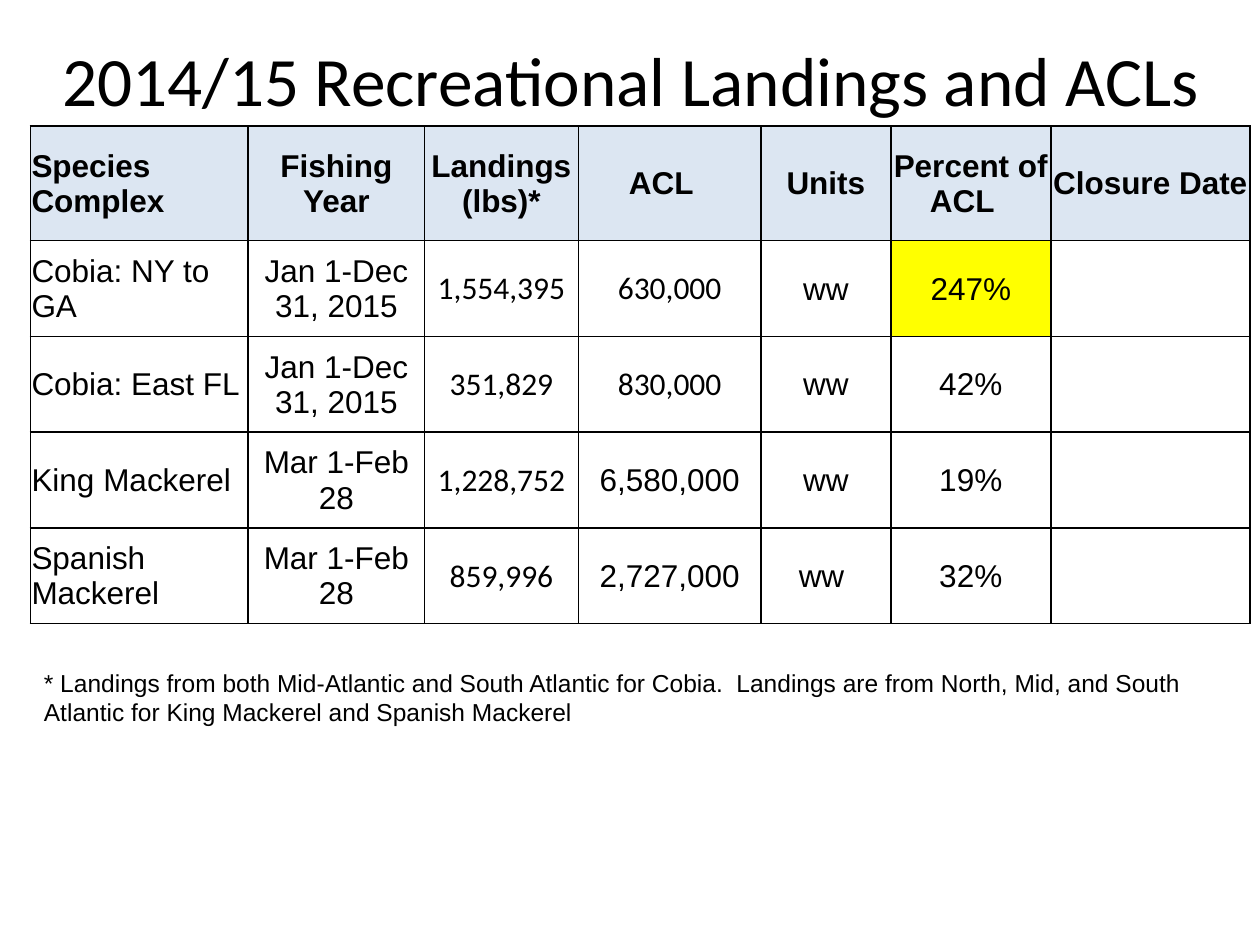
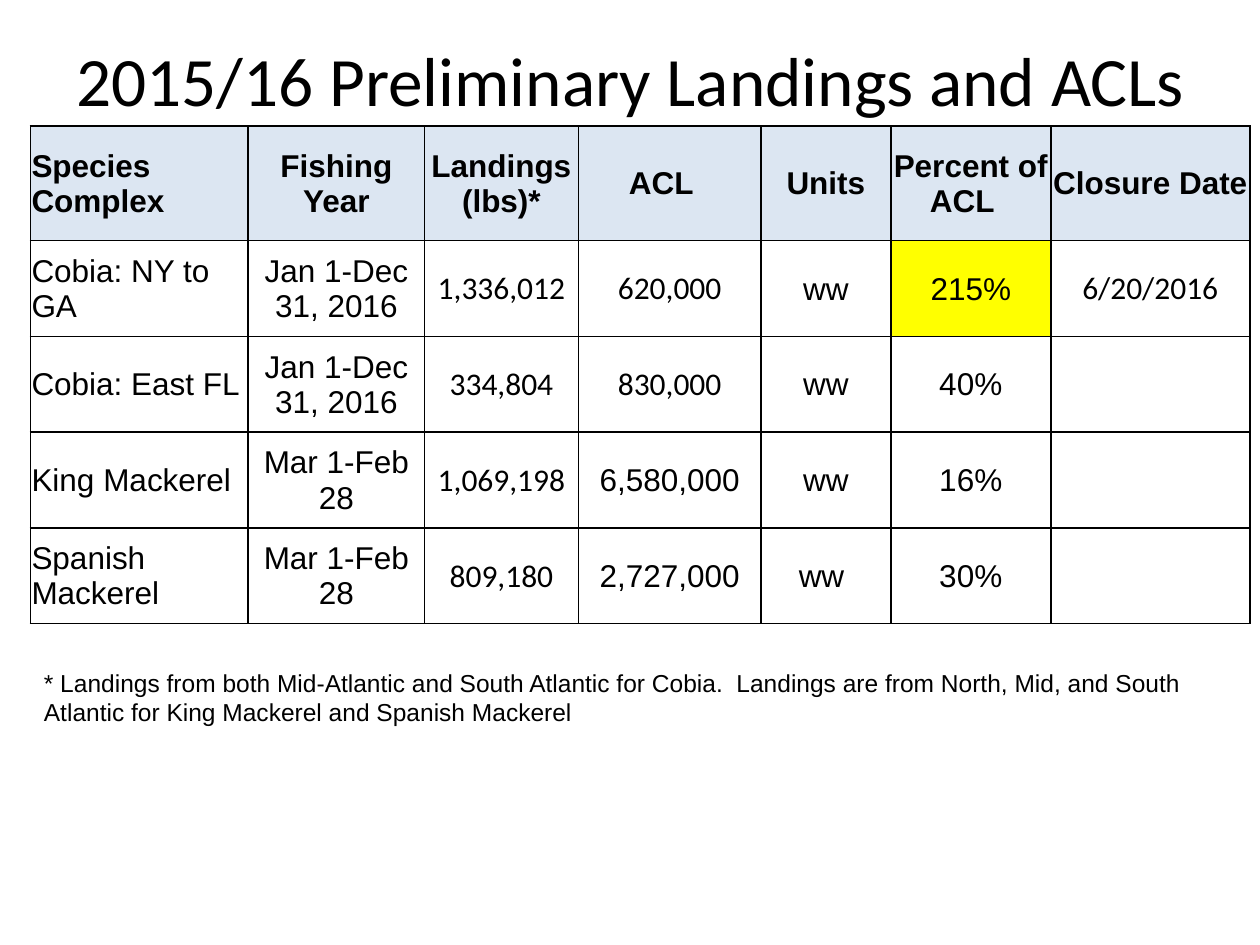
from lxml import etree
from pptx import Presentation
from pptx.dml.color import RGBColor
from pptx.enum.text import MSO_ANCHOR as Anchor, MSO_AUTO_SIZE as AutoSize, PP_ALIGN as Align
from pptx.oxml.ns import qn
from pptx.util import Inches, Pt

BLACK = RGBColor(0x00, 0x00, 0x00)
WHITE = RGBColor(0xFF, 0xFF, 0xFF)
HEADER_BLUE = RGBColor(0xDC, 0xE6, 0xF2)
OVER_LIMIT_YELLOW = RGBColor(0xFF, 0xFF, 0x00)

BODY_FONT = "Arial"
FIGURE_FONT = "Calibri"

COL_WIDTHS = [1.73, 1.4, 1.22, 1.45, 1.03, 1.27, 1.58]
HEADER_HEIGHT, ROW_HEIGHT = 0.91, 0.76
HEADERS = ["Species Complex", "Fishing Year", "Landings (lbs)*", "ACL  ",
           "Units", "Percent of ACL  ", "Closure Date"]
SPECIES, LANDINGS, ACL, PERCENT, CLOSURE = 0, 2, 3, 5, 6

NOTE = ("* Landings from both Mid-Atlantic and South Atlantic for Cobia.  "
        "Landings are from North, Mid, and South Atlantic for King Mackerel "
        "and Spanish Mackerel")

SLIDES = [
    ("2014/15 Recreational Landings and ACLs", [
        ["Cobia: NY to GA", "Jan 1-Dec 31, 2015", "1,554,395", "630,000", "ww", "247%", ""],
        ["Cobia: East FL", "Jan 1-Dec 31, 2015", "351,829", "830,000", "ww", "42%", ""],
        ["King Mackerel", "Mar 1-Feb 28", "1,228,752", "6,580,000", "ww", "19%", ""],
        ["Spanish Mackerel", "Mar 1-Feb 28", "859,996", "2,727,000", "ww ", "32%", ""],
    ]),
    ("2015/16 Preliminary Landings and ACLs", [
        ["Cobia: NY to GA", "Jan 1-Dec 31, 2016", "1,336,012", "620,000", "ww", "215%",
         "6/20/2016"],
        ["Cobia: East FL", "Jan 1-Dec 31, 2016", "334,804", "830,000", "ww", "40%", ""],
        ["King Mackerel", "Mar 1-Feb 28", "1,069,198", "6,580,000", "ww", "16%", ""],
        ["Spanish Mackerel", "Mar 1-Feb 28", "809,180", "2,727,000", "ww ", "30%", ""],
    ]),
]


def write(tf, text, size=18, font=BODY_FONT, bold=False, align=Align.LEFT):
    p = tf.paragraphs[0]
    p.alignment = align
    r = p.add_run()
    r.text = text
    r.font.size = Pt(size)
    r.font.name = font
    r.font.bold = bold
    r.font.color.rgb = BLACK


def add_title(slide, text):
    sp = slide.shapes.title
    sp.left, sp.top = Inches(0.17), Inches(0)
    sp.width, sp.height = Inches(9.67), Inches(1.25)
    tf = sp.text_frame
    tf.auto_size = AutoSize.NONE
    tf.vertical_anchor = Anchor.MIDDLE
    write(tf, text, size=39.6, font="Calibri", align=Align.CENTER)


def add_note(slide, text):
    sp = slide.shapes.add_textbox(Inches(0.25), Inches(5.25), Inches(9.42), Inches(1.04))
    sp.text_frame.word_wrap = True
    write(sp.text_frame, text, size=14)


def set_borders(cell, width=Pt(1)):
    tcPr = cell._tc.get_or_add_tcPr()
    for side in ("a:lnL", "a:lnR", "a:lnT", "a:lnB"):
        ln = etree.SubElement(tcPr, qn(side), w=str(width))
        fill = etree.SubElement(ln, qn("a:solidFill"))
        etree.SubElement(fill, qn("a:srgbClr"), val=str(BLACK))


def format_cell(cell, fill):
    cell.margin_left = cell.margin_right = cell.margin_top = Inches(0.01)
    cell.margin_bottom = 0
    cell.vertical_anchor = Anchor.MIDDLE
    set_borders(cell)
    if fill is None:
        cell.fill.background()
    else:
        cell.fill.solid()
        cell.fill.fore_color.rgb = fill


def cell_fill(row, col, text):
    if row == 0:
        return HEADER_BLUE
    over_limit = col == PERCENT and int(text.rstrip("%")) > 100
    return OVER_LIMIT_YELLOW if over_limit else None


def cell_font(row, col, species):
    """Landings, closure dates and the cobia limits use the figure font."""
    is_figure = col in (LANDINGS, CLOSURE) or (col == ACL and species.startswith("Cobia"))
    return FIGURE_FONT if row > 0 and is_figure else BODY_FONT


def add_landings_table(slide, rows):
    grid = [HEADERS] + rows
    heights = [HEADER_HEIGHT] + [ROW_HEIGHT] * len(rows)
    table = slide.shapes.add_table(
        len(grid), len(HEADERS), Inches(0.24), Inches(1),
        Inches(sum(COL_WIDTHS)), Inches(sum(heights))).table
    table.horz_banding = False
    for column, width in zip(table.columns, COL_WIDTHS):
        column.width = Inches(width)
    for i, (values, height) in enumerate(zip(grid, heights)):
        table.rows[i].height = Inches(height)
        for j, text in enumerate(values):
            cell = table.cell(i, j)
            format_cell(cell, cell_fill(i, j, text))
            if text:
                write(cell.text_frame, text, bold=i == 0,
                      font=cell_font(i, j, values[SPECIES]),
                      align=Align.LEFT if j == SPECIES else Align.CENTER)


def main():
    prs = Presentation()
    prs.slide_width, prs.slide_height = Inches(10), Inches(7.5)
    background = prs.slide_master.background.fill
    background.solid()
    background.fore_color.rgb = WHITE
    title_only = prs.slide_layouts[5]
    for title, rows in SLIDES:
        slide = prs.slides.add_slide(title_only)
        add_title(slide, title)
        add_note(slide, NOTE)
        add_landings_table(slide, rows)
    prs.save("out.pptx")


if __name__ == "__main__":
    main()
